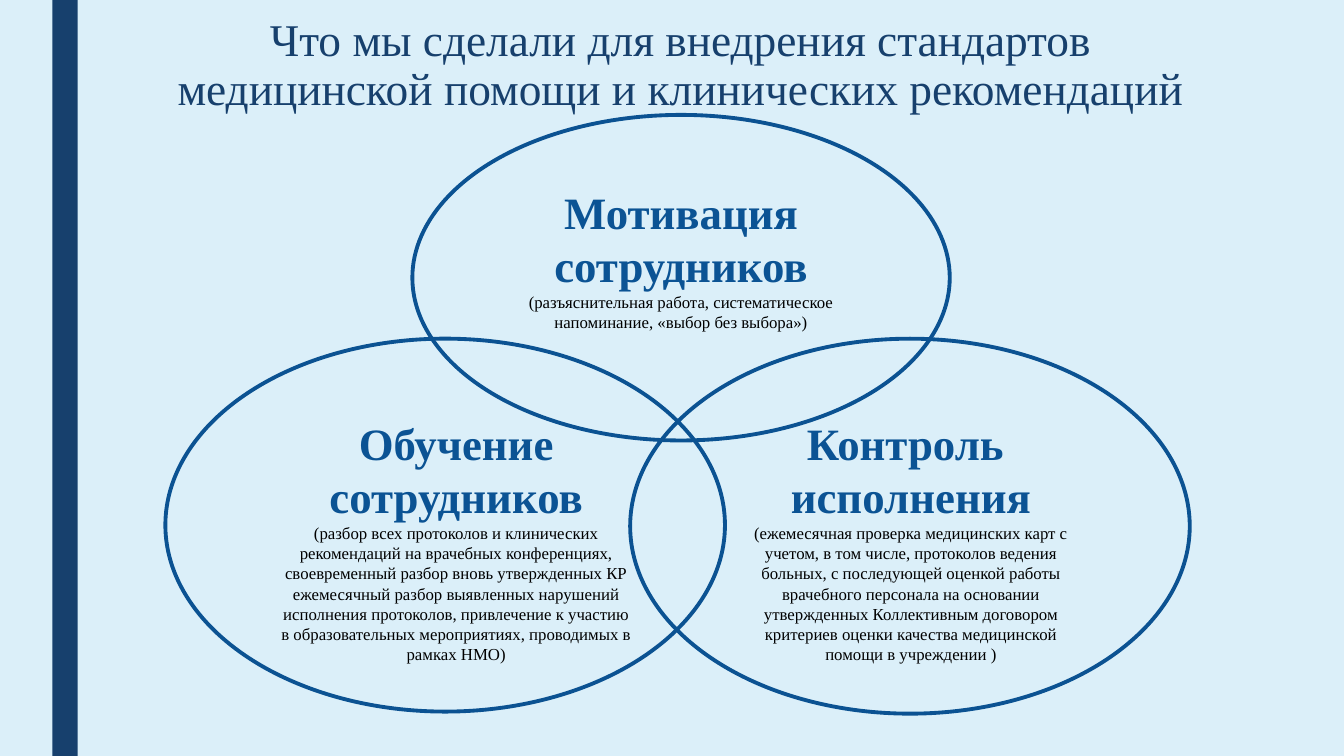
import pptx
import pptx.dml.color
import pptx.enum.shapes
import pptx.enum.text
import pptx.util
from pptx.util import Inches

COLOURS = {"sky": "DBEFF9", "navy": "17406D", "ring": "0B5292", "heading": "0B5394", "body": "000000"}


def colour(name):
    """Return the named colour."""
    return pptx.dml.color.RGBColor.from_string(COLOURS[name])


def write(para, text, size, ink, bold=False, spacing=None):
    """Put centred, formatted text into a paragraph."""
    para.alignment = pptx.enum.text.PP_ALIGN.CENTER
    if spacing:
        para.line_spacing = spacing
    span = para.add_run()
    span.text = text
    span.font.name = "Times New Roman"
    span.font.size = pptx.util.Pt(size)
    span.font.bold = bold
    span.font.color.rgb = colour(ink)


class VennPage:
    """Hold the current page and draw its elements."""

    def __init__(self, deck):
        """Add a title-only page with a plain background."""
        self.page = deck.slides.add_slide(deck.slide_layouts[5])
        self.page.background.fill.solid()
        self.page.background.fill.fore_color.rgb = colour("sky")

    def title(self, text, left, top, width, height):
        """Place and format the title."""
        box = self.page.shapes.title
        box.left, box.top, box.width, box.height = map(Inches, (left, top, width, height))
        frame = box.text_frame
        frame.word_wrap = True
        frame.auto_size = pptx.enum.text.MSO_AUTO_SIZE.NONE
        frame.vertical_anchor = pptx.enum.text.MSO_ANCHOR.TOP
        write(frame.paragraphs[0], text, 32.4, "navy", spacing=0.89)

    def bar(self, left, top, width, height):
        """Draw the solid side bar."""
        shape = self.page.shapes.add_shape(
            pptx.enum.shapes.MSO_SHAPE.RECTANGLE, *map(Inches, (left, top, width, height)))
        shape.shadow.inherit = False
        shape.fill.solid()
        shape.fill.fore_color.rgb = colour("navy")
        shape.line.fill.background()

    def ring(self, left, top, width, height):
        """Draw an unfilled ellipse."""
        shape = self.page.shapes.add_shape(
            pptx.enum.shapes.MSO_SHAPE.OVAL, *map(Inches, (left, top, width, height)))
        shape.shadow.inherit = False
        shape.fill.background()
        shape.line.color.rgb = colour("ring")
        shape.line.width = pptx.util.Pt(2.75)

    def caption(self, headings, detail, left, top, height):
        """Write bold heading lines with a small detail below."""
        box = self.page.shapes.add_textbox(*map(Inches, (left, top, 3.69, height)))
        frame = box.text_frame
        frame.word_wrap = True
        frame.auto_size = pptx.enum.text.MSO_AUTO_SIZE.SHAPE_TO_FIT_TEXT
        para = frame.paragraphs[0]
        for heading in headings:
            write(para, heading, 32, "heading", bold=True)
            para = frame.add_paragraph()
        write(para, detail, 12, "body")


TOPICS = [
    ((4.09, 1.14, 5.33, 3.23), (4.91, 1.78, 1.58), ["Мотивация сотрудников"],
     "(разъяснительная работа, систематическое напоминание, «выбор без выбора»)"),
    ((1.64, 3.36, 5.55, 3.7), (2.68, 4.07, 2.59), ["Обучение", "сотрудников"],
     "(разбор всех протоколов и клинических рекомендаций на врачебных конференциях, "
     "своевременный разбор вновь утвержденных КР ежемесячный разбор выявленных нарушений "
     "исполнения протоколов, привлечение к участию в образовательных мероприятиях, "
     "проводимых в рамках НМО)"),
    ((6.25, 3.36, 5.55, 3.72), (7.19, 4.07, 2.59), ["Контроль ", "исполнения"],
     "(ежемесячная проверка медицинских карт с учетом, в том числе, протоколов ведения "
     "больных, с последующей оценкой работы врачебного персонала на основании "
     "утвержденных Коллективным договором критериев оценки качества медицинской "
     "помощи в учреждении )"),
]


def main():
    """Build and save the deck."""
    deck = pptx.Presentation()
    deck.slide_width, deck.slide_height = Inches(13.33), Inches(7.5)
    venn = VennPage(deck)
    venn.bar(0.52, 0, 0.25, 7.5)
    venn.title("Что мы сделали для внедрения стандартов медицинской помощи "
               "и клинических рекомендаций", 1.5, 0.13, 10.5, 1.62)
    for ring, place, headings, detail in TOPICS:
        venn.ring(*ring)
        venn.caption(headings, detail, *place)
    deck.save("out.pptx")


if __name__ == "__main__":
    main()
